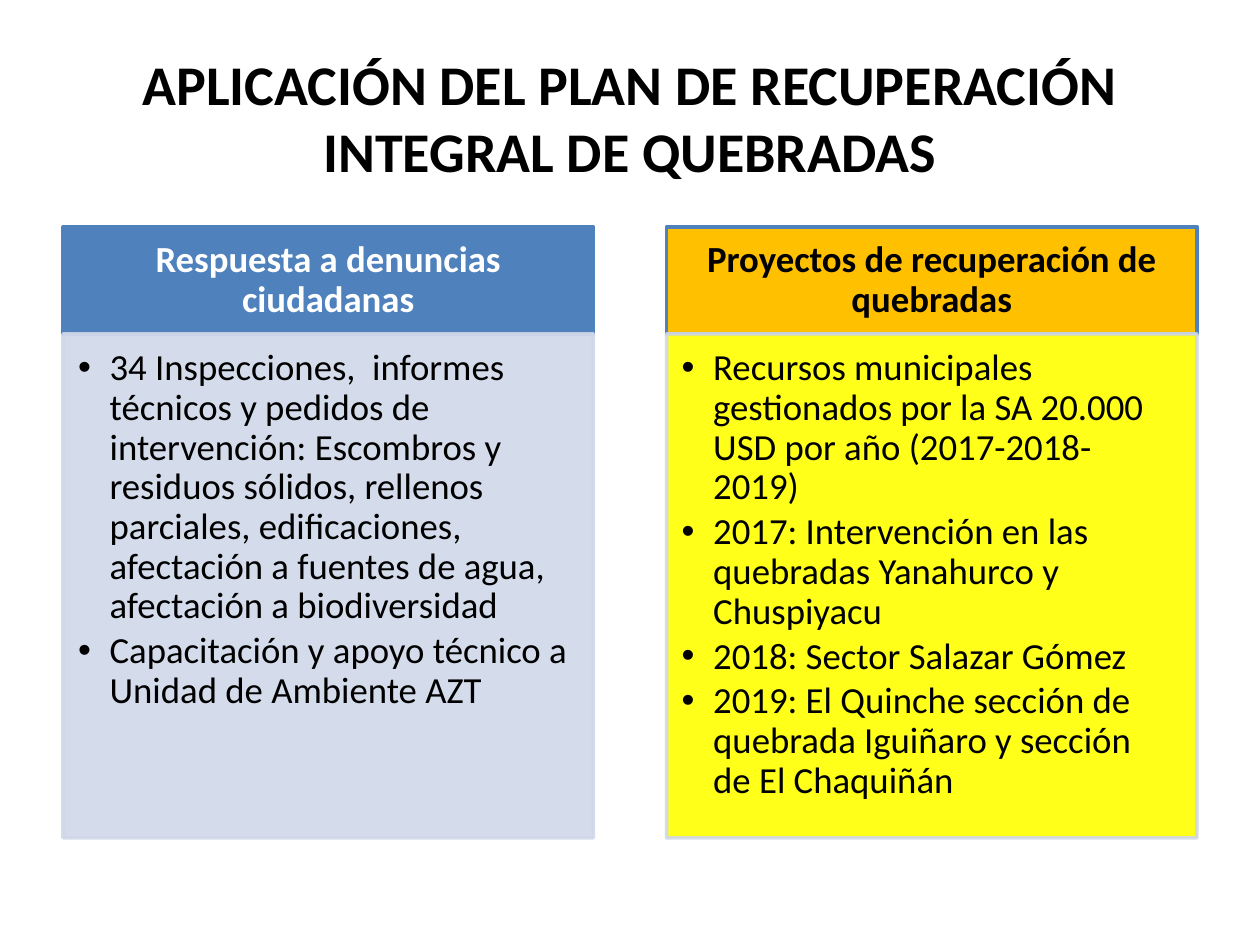
from lxml import etree
from pptx import Presentation
from pptx import util as u
from pptx.dml.color import RGBColor
from pptx.enum import shapes, text
from pptx.oxml.ns import qn

TITLE = "APLICACIÓN DEL PLAN DE RECUPERACIÓN INTEGRAL DE QUEBRADAS"
COLUMNS = [
    {
        "heading": "Respuesta a denuncias ciudadanas",
        "heading_colors": ("4F81BD", "FFFFFF"),
        "body_fill": "D0D8E8",
        "items": [
            "34 Inspecciones,  informes técnicos y pedidos de intervención: "
            "Escombros y residuos sólidos, rellenos parciales, edificaciones, "
            "afectación a fuentes de agua, afectación a biodiversidad",
            "Capacitación y apoyo técnico a Unidad de Ambiente AZT",
        ],
    },
    {
        "heading": "Proyectos de recuperación de quebradas",
        "heading_colors": ("FFC000", "000000"),
        "body_fill": "FFFF00",
        "items": [
            "Recursos municipales gestionados por la SA 20.000 USD por año (2017-2018-2019)",
            "2017: Intervención en las quebradas Yanahurco y Chuspiyacu",
            "2018: Sector Salazar Gómez",
            "2019: El Quinche sección de quebrada Iguiñaro y sección de El Chaquiñán",
        ],
    },
]
MARGIN, COLUMN_WIDTH, GAP = 0.5, 4.21, 0.58
TOP, HEADING_HEIGHT, BODY_HEIGHT = 1.8, 0.85, 4


def paint(color_format, color):
    color_format.rgb = RGBColor.from_string(color)


def place(shape, left, top, width, height):
    shape.left, shape.top = u.Inches(left), u.Inches(top)
    shape.width, shape.height = u.Inches(width), u.Inches(height)


def write(shape, lines, size, color, bold, align, anchor, insets):
    frame = shape.text_frame
    frame.word_wrap = True
    frame.auto_size = text.MSO_AUTO_SIZE.NONE
    frame.vertical_anchor = anchor
    frame.margin_left, frame.margin_top, frame.margin_right, frame.margin_bottom = map(u.Inches, insets)
    frame.text = "\n".join(lines)
    for paragraph in frame.paragraphs:
        paragraph.alignment = align
        for run in paragraph.runs:
            run.font.name, run.font.size, run.font.bold = "Calibri", u.Pt(size), bold
            paint(run.font.color, color)
    return frame.paragraphs


def add_box(slide, left, top, height, fill, line):
    box = slide.shapes.add_shape(
        shapes.MSO_SHAPE.RECTANGLE, *map(u.Inches, (left, top, COLUMN_WIDTH, height)))
    box.shadow.inherit = False
    box.fill.solid()
    paint(box.fill.fore_color, fill)
    paint(box.line.color, line)
    box.line.width = u.Pt(2)
    return box


def set_opacity(shape, percent):
    for color in shape.element.spPr.iter(qn("a:srgbClr")):
        etree.SubElement(color, qn("a:alpha"), val=str(percent * 1000))


def add_bullet(paragraph):
    properties = paragraph._p.get_or_add_pPr()
    properties.set("marL", str(u.Inches(0.25)))
    properties.set("indent", str(u.Inches(-0.25)))
    etree.SubElement(properties, qn("a:buFont"), typeface="Arial")
    etree.SubElement(properties, qn("a:buChar"), char="•")


def add_column(slide, left, column):
    fill, color = column["heading_colors"]
    heading = add_box(slide, left, TOP, HEADING_HEIGHT, fill, "4F81BD")
    for paragraph in write(heading, [column["heading"]], 21, color, True, text.PP_ALIGN.CENTER,
                           text.MSO_ANCHOR.MIDDLE, (0.16, 0.09, 0.16, 0.09)):
        paragraph.line_spacing = 0.9

    body = add_box(slide, left, TOP + HEADING_HEIGHT, BODY_HEIGHT, column["body_fill"], "D0D8E8")
    set_opacity(body, 90)
    for paragraph in write(body, column["items"], 21, "000000", False, text.PP_ALIGN.LEFT,
                           text.MSO_ANCHOR.TOP, (0.12, 0.12, 0.16, 0.18)):
        paragraph.line_spacing = 0.9
        paragraph.space_after = u.Pt(3)
        add_bullet(paragraph)


def main():
    """Build the slide with a title and two headed columns."""
    presentation = Presentation()
    presentation.slide_width, presentation.slide_height = u.Inches(10), u.Inches(7.5)
    slide = presentation.slides.add_slide(presentation.slide_layouts[5])
    title = slide.shapes.title
    place(title, MARGIN, 0.3, 9, 1.25)
    write(title, [TITLE], 32, "000000", True, text.PP_ALIGN.CENTER,
          text.MSO_ANCHOR.MIDDLE, (0.1, 0.05, 0.1, 0.05))
    for index, column in enumerate(COLUMNS):
        add_column(slide, MARGIN + index * (COLUMN_WIDTH + GAP), column)
    presentation.save("out.pptx")


if __name__ == "__main__":
    main()
